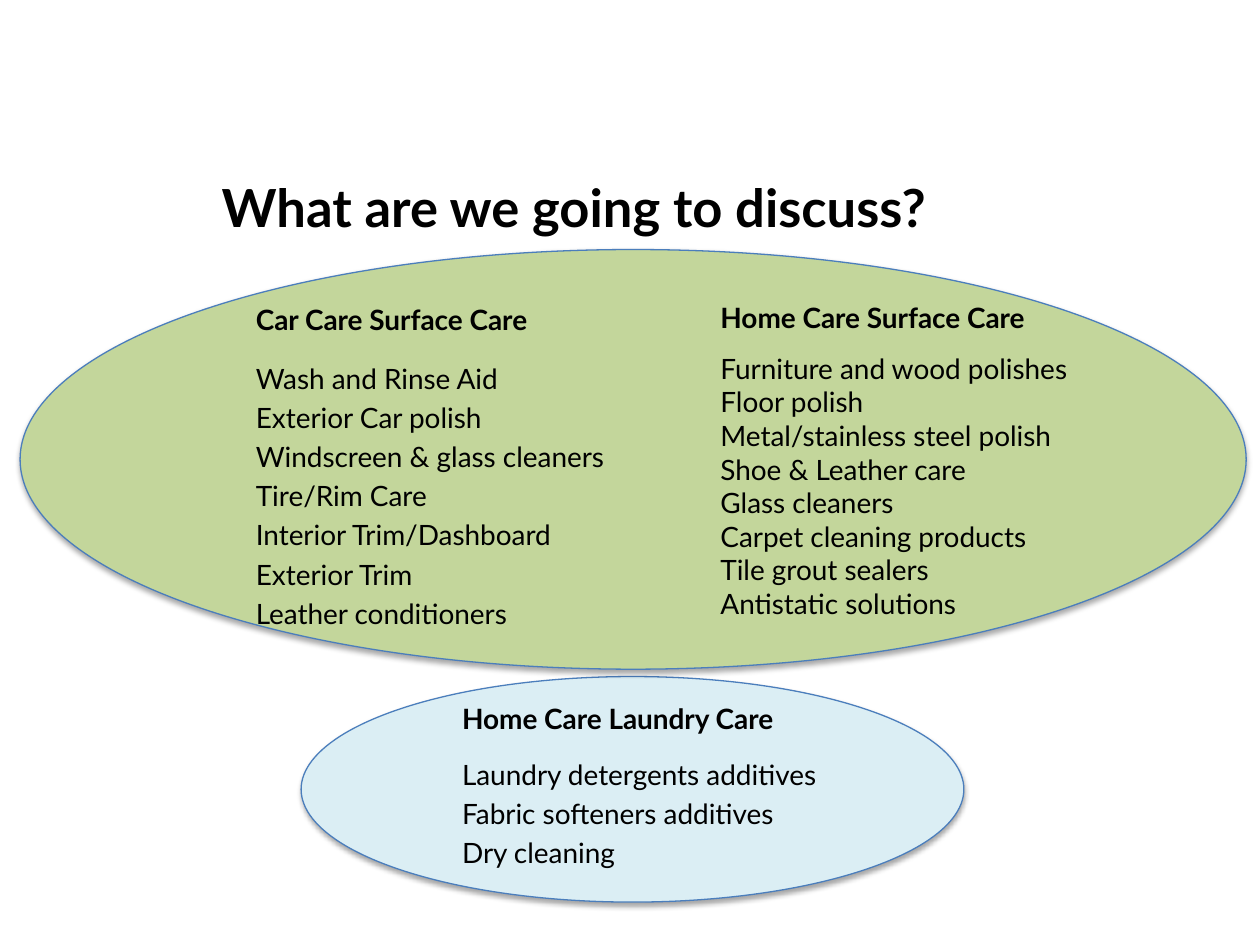
from dataclasses import dataclass

from lxml.etree import SubElement
from pptx import Presentation
from pptx.dml.color import RGBColor
from pptx.enum.shapes import MSO_SHAPE as Shape
from pptx.enum.text import MSO_ANCHOR as Anchor
from pptx.oxml.ns import qn
from pptx.slide import Slide
from pptx.util import Pt

FONT = "Lato"
BLACK = "000000"
OUTLINE = "4B7EBC"
TITLE_SIZE = 30
TEXT_SIZE = 16
HANGING_INDENT = 27


@dataclass(frozen=True)
class Box:
    left: float
    top: float
    width: float
    height: float

    def lengths(self) -> tuple[Pt, Pt, Pt, Pt]:
        return Pt(self.left), Pt(self.top), Pt(self.width), Pt(self.height)


@dataclass(frozen=True)
class Oval:
    box: Box
    fill: str


@dataclass(frozen=True)
class Topic:
    box: Box
    heading: str
    items: tuple[str, ...]
    first_gap: float
    item_gap: float = 0
    indent: float = 0
    inset_x: float = 7.2
    inset_y: float = 3.6


OVALS = (
    Oval(Box(172.1, 386.6, 378.7, 128.9), "DBEEF4"),
    Oval(Box(11.5, 142.6, 700.6, 239.8), "C3D69B"),
)

TITLE = Topic(
    Box(126.7, 100.1, 545.8, 64.1),
    "What are we going to discuss?",
    (),
    first_gap=0,
    inset_x=0,
    inset_y=0,
)

TOPICS = (
    Topic(
        Box(146.2, 172.8, 245.5, 190.8),
        "Car Care Surface Care",
        (
            "Wash and Rinse Aid",
            "Exterior Car polish",
            "Windscreen & glass cleaners",
            "Tire/Rim Care",
            "Interior Trim/Dashboard",
            "Exterior Trim",
            "Leather conditioners",
        ),
        first_gap=14.4,
        item_gap=3.2,
        indent=HANGING_INDENT,
        inset_x=0,
        inset_y=0,
    ),
    Topic(
        Box(404.6, 168.5, 272.2, 198.7),
        "Home Care Surface Care",
        (
            "Furniture and wood polishes",
            "Floor polish",
            "Metal/stainless steel polish",
            "Shoe & Leather care",
            "Glass cleaners",
            "Carpet cleaning products",
            "Tile grout sealers",
            "Antistatic solutions",
        ),
        first_gap=9.6,
    ),
    Topic(
        Box(257, 397.4, 269.3, 105.8),
        "Home Care Laundry Care",
        (
            "Laundry detergents additives",
            "Fabric softeners additives",
            "Dry cleaning",
        ),
        first_gap=12.8,
        item_gap=3.2,
        indent=HANGING_INDENT,
    ),
)


def color(value: str) -> RGBColor:
    return RGBColor.from_string(value)


def add_shadow(shape) -> None:
    shape.shadow.inherit = False
    effects = shape._element.spPr.find(qn("a:effectLst"))
    shadow = SubElement(
        effects,
        qn("a:outerShdw"),
        blurRad=str(Pt(3.1)),
        dist=str(Pt(1.8)),
        dir="5400000",
        rotWithShape="0",
    )
    shade = SubElement(shadow, qn("a:srgbClr"), val=BLACK)
    SubElement(shade, qn("a:alpha"), val="35000")


def add_oval(slide: Slide, oval: Oval) -> None:
    shape = slide.shapes.add_shape(Shape.OVAL, *oval.box.lengths())
    shape.fill.solid()
    shape.fill.fore_color.rgb = color(oval.fill)
    shape.line.color.rgb = color(OUTLINE)
    shape.line.width = Pt(0.75)
    add_shadow(shape)


def style_paragraph(paragraph, size: float, bold: bool) -> None:
    for run in paragraph.runs:
        run.font.name = FONT
        run.font.size = Pt(size)
        run.font.bold = bold
        run.font.color.rgb = color(BLACK)


def add_topic(slide: Slide, topic: Topic, heading_size: float) -> None:
    text_frame = slide.shapes.add_textbox(*topic.box.lengths()).text_frame
    text_frame.word_wrap = True
    text_frame.vertical_anchor = Anchor.TOP
    text_frame.margin_left = text_frame.margin_right = Pt(topic.inset_x)
    text_frame.margin_top = text_frame.margin_bottom = Pt(topic.inset_y)
    text_frame.text = "\n".join((topic.heading, *topic.items))
    heading, *items = text_frame.paragraphs
    style_paragraph(heading, heading_size, bold=True)
    for index, paragraph in enumerate(items):
        gap = topic.item_gap if index else topic.first_gap
        paragraph.space_before = Pt(gap)
        properties = paragraph._p.get_or_add_pPr()
        properties.set("marL", str(Pt(topic.indent)))
        properties.set("indent", str(Pt(-topic.indent)))
        style_paragraph(paragraph, TEXT_SIZE, bold=False)


def main() -> None:
    presentation = Presentation()
    presentation.slide_width = Pt(720)
    presentation.slide_height = Pt(540)
    slide = presentation.slides.add_slide(presentation.slide_layouts[6])
    for oval in OVALS:
        add_oval(slide, oval)
    add_topic(slide, TITLE, TITLE_SIZE)
    for topic in TOPICS:
        add_topic(slide, topic, TEXT_SIZE)
    presentation.save("out.pptx")


if __name__ == "__main__":
    main()
